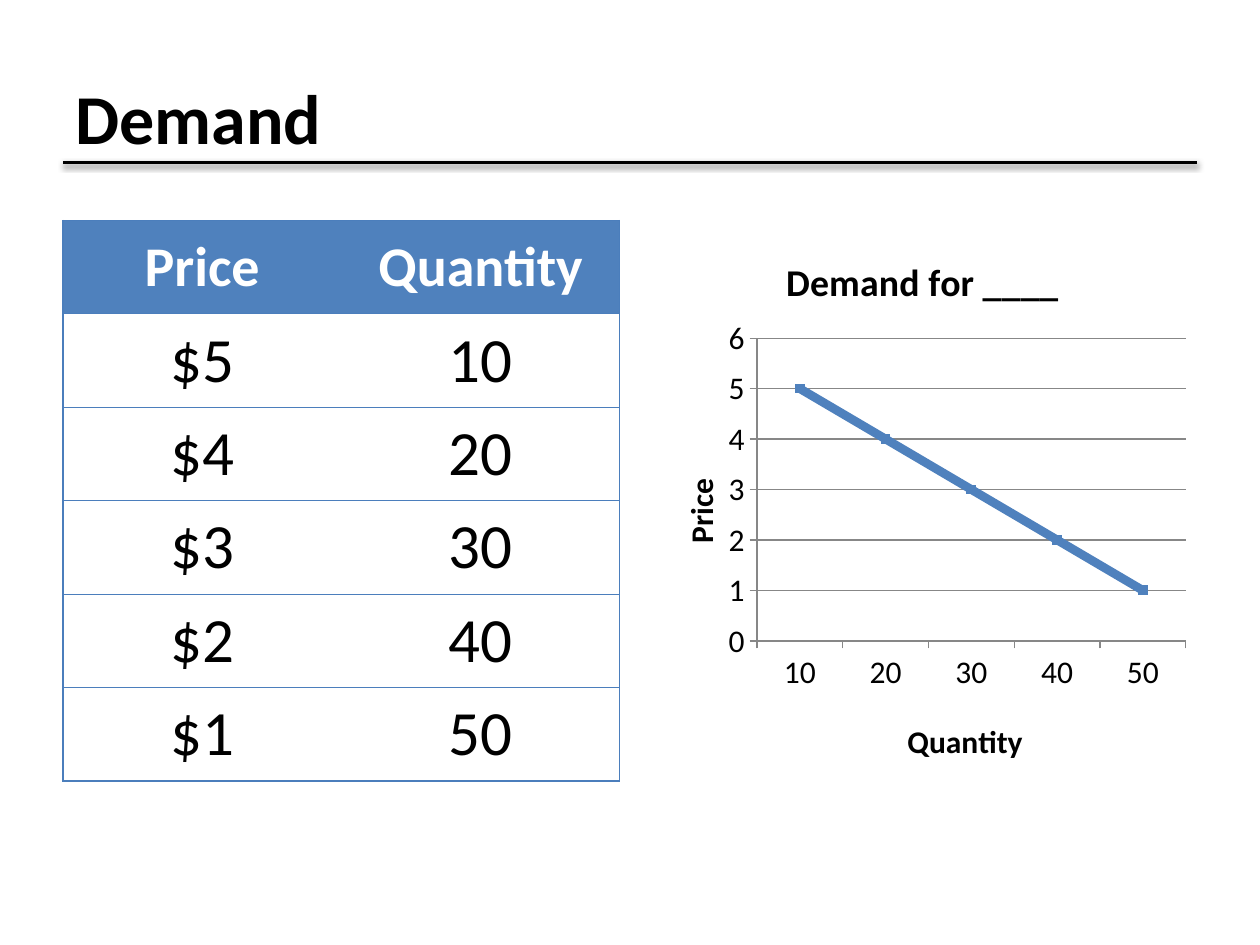
from dataclasses import dataclass
from lxml import etree
from pptx import Presentation
from pptx.chart.data import CategoryChartData
from pptx.dml.color import RGBColor
from pptx.enum.chart import XL_CHART_TYPE, XL_MARKER_STYLE, XL_TICK_MARK
from pptx.enum.shapes import MSO_CONNECTOR
from pptx.enum.text import MSO_ANCHOR, PP_ALIGN
from pptx.oxml import parse_xml
from pptx.oxml.ns import nsdecls, qn
from pptx.util import Inches, Pt

LINE = XL_CHART_TYPE.LINE_MARKERS
SQUARE = XL_MARKER_STYLE.SQUARE
OUT = XL_TICK_MARK.OUTSIDE
STRAIGHT = MSO_CONNECTOR.STRAIGHT
MIDDLE = MSO_ANCHOR.MIDDLE
LEFT, CENTER = PP_ALIGN.LEFT, PP_ALIGN.CENTER

TITLE = "Demand"
HEAD = ("Price", "Quantity")
DEMAND = [(5, 10), (4, 20), (3, 30), (2, 40), (1, 50)]
CHART = "Demand for ____"


@dataclass(frozen=True)
class Theme:
    font: str = "Calibri"
    ink: str = "000000"
    paper: str = "FFFFFF"
    blue: str = "4F81BD"
    edge: str = "4B7EBC"
    grid: str = "878787"
    title: float = 40
    head: float = 32
    body: float = 36
    label: float = 18
    name: float = 21.6


T = Theme()
W, H = Inches(10), Inches(7.5)
EDGE = 0.05 * W
WIDE = W - 2 * EDGE
GAP = Inches(0.16)
HALF = (WIDE - GAP) / 2
TOP, TALL = Inches(1.75), Inches(4.45)
RULE = Inches(1.29)


def style(font, size, color=T.ink, bold=False):
    font.name = T.font
    font.size = Pt(size)
    font.bold = bold
    font.color.rgb = RGBColor.from_string(color)


def write(frame, text, align, *look):
    frame.text = text
    frame.vertical_anchor = MIDDLE
    para = frame.paragraphs[0]
    para.alignment = align
    style(para.runs[0].font, *look)


def stroke(line, color, width):
    line.color.rgb = RGBColor.from_string(color)
    line.width = Pt(width)


def border(cell, sides):
    props = cell._tc.get_or_add_tcPr()
    for side in "LRTB":
        ln = etree.SubElement(props, qn("a:ln" + side), w=str(Pt(0.75)))
        if side in sides:
            fill = etree.SubElement(ln, qn("a:solidFill"))
            etree.SubElement(fill, qn("a:srgbClr"), val=T.edge)
        else:
            etree.SubElement(ln, qn("a:noFill"))


def layout(x, y, w=None, h=None):
    parts = [("xMode", "edge"), ("yMode", "edge"), ("x", x), ("y", y)]
    if w:
        parts = [("layoutTarget", "inner")] + parts + [("w", w), ("h", h)]
    body = "".join(f'<c:{key} val="{val}"/>' for key, val in parts)
    return parse_xml(f'<c:layout {nsdecls("c")}><c:manualLayout>{body}'
                     '</c:manualLayout></c:layout>')


def place(parent, box):
    for old in parent.findall(qn("c:layout")):
        parent.remove(old)
    after = parent.find(qn("c:tx"))
    parent.insert(0 if after is None else 1, box)


def label(holder, root, text, size, x, y):
    frame = holder.text_frame
    frame.text = text
    style(frame.paragraphs[0].runs[0].font, size, T.ink, True)
    place(root, layout(x, y))


def add_title(slide):
    title = slide.shapes.title
    title.left, title.top = int(EDGE), Inches(0.3)
    title.width, title.height = int(WIDE), Inches(1.25)
    write(title.text_frame, TITLE, LEFT, T.title, T.ink, True)


def add_rule(slide):
    rule = slide.shapes.add_connector(STRAIGHT, int(EDGE), RULE,
                                      int(EDGE + WIDE), RULE)
    stroke(rule.line, T.ink, 2)
    rule._element.spPr.append(parse_xml(
        f'<a:effectLst {nsdecls("a")}><a:outerShdw blurRad="40000" '
        'dist="20000" dir="5400000" rotWithShape="0">'
        f'<a:srgbClr val="{T.ink}"><a:alpha val="38000"/></a:srgbClr>'
        '</a:outerShdw></a:effectLst>'))


def add_grid(slide):
    rows = [HEAD] + [(f"${price}", str(count)) for price, count in DEMAND]
    table = slide.shapes.add_table(len(rows), len(HEAD), int(EDGE), TOP,
                                   int(HALF), TALL).table
    for r, row in enumerate(rows):
        table.rows[r].height = int(TALL / len(rows))
        for c, text in enumerate(row):
            cell = table.cell(r, c)
            border(cell, "TB" + "LR"[c])
            look = (T.body,) if r else (T.head, T.paper, True)
            write(cell.text_frame, text, CENTER, *look)
            cell.vertical_anchor = MIDDLE
            if r:
                cell.fill.background()
            else:
                cell.fill.solid()
                cell.fill.fore_color.rgb = RGBColor.from_string(T.blue)


def add_plot(slide):
    data = CategoryChartData()
    data.categories = [str(count) for _, count in DEMAND]
    data.add_series("Series 1", [price for price, _ in DEMAND])
    chart = slide.shapes.add_chart(LINE, int(EDGE + HALF + GAP), TOP,
                                   int(HALF), TALL, data).chart
    style(chart.font, T.label)
    chart.has_legend = False
    chart.has_title = True
    name = chart.chart_title
    label(name, name._element, CHART, T.name, 0.25, 0.05)

    price, count = HEAD
    for axis, text, x, y in ((chart.category_axis, count, 0.47, 0.88),
                             (chart.value_axis, price, 0.06, 0.45)):
        axis.has_title = True
        label(axis.axis_title, axis.axis_title._element, text, T.label, x, y)
        axis.major_tick_mark = OUT
        stroke(axis.format.line, T.grid, 0.75)
    scale = chart.value_axis
    scale.minimum_scale, scale.maximum_scale, scale.major_unit = 0, 6, 1
    scale.has_major_gridlines = True
    stroke(scale.major_gridlines.format.line, T.grid, 0.75)

    plot = chart.plots[0]
    plot.vary_by_categories = False
    place(plot._element.getparent(), layout(0.21, 0.21, 0.77, 0.54))
    line = plot.series[0]
    line.smooth = False
    stroke(line.format.line, T.blue, 5)
    line.marker.style = SQUARE
    line.marker.size = 5
    line.marker.format.fill.solid()
    line.marker.format.fill.fore_color.rgb = RGBColor.from_string(T.blue)
    stroke(line.marker.format.line, T.blue, 0.75)


def main():
    deck = Presentation()
    deck.slide_width, deck.slide_height = W, H
    slide = deck.slides.add_slide(deck.slide_layouts[5])
    for draw in (add_rule, add_title, add_grid, add_plot):
        draw(slide)
    deck.save("out.pptx")


if __name__ == "__main__":
    main()
